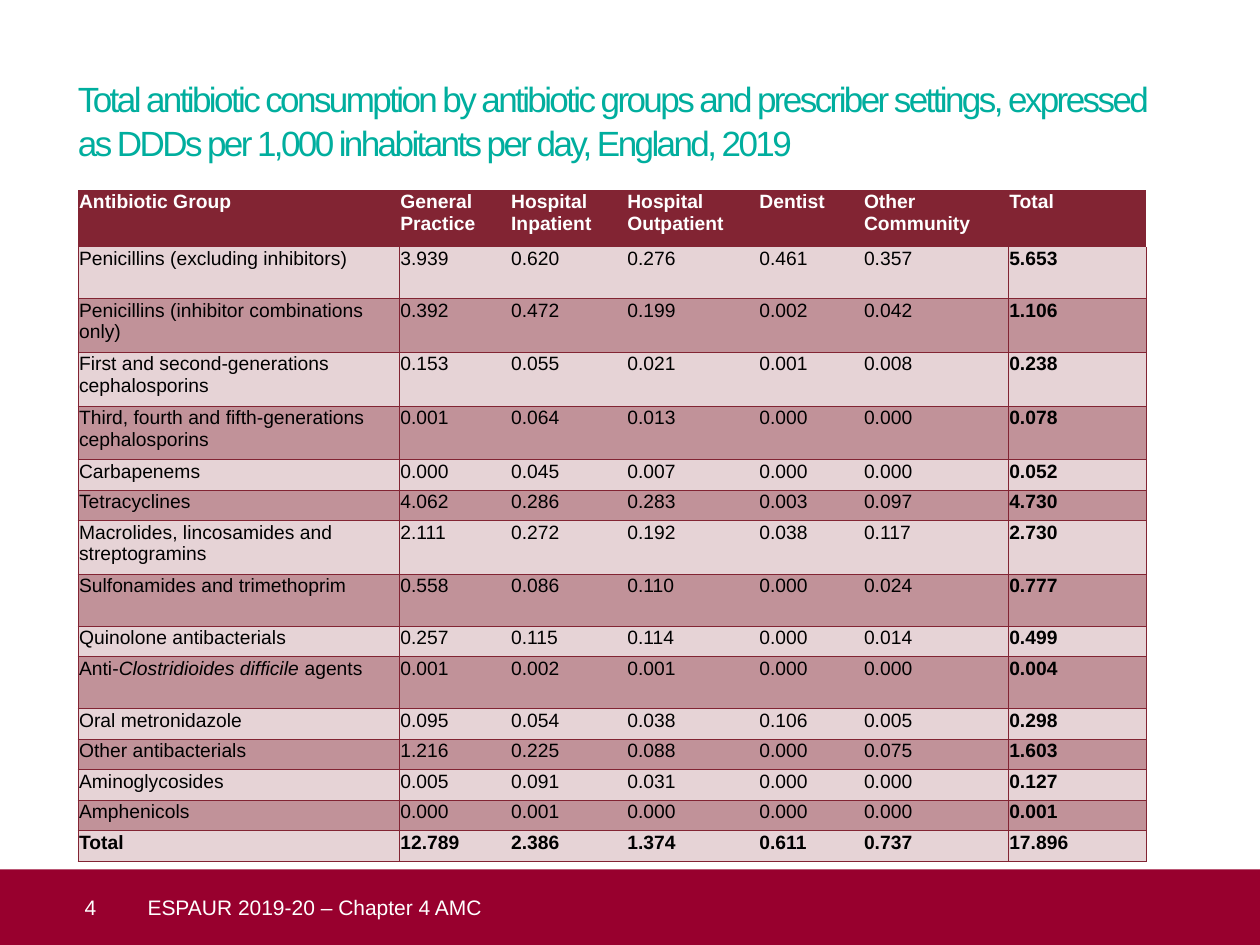
from dataclasses import dataclass

from lxml.etree import SubElement
from pptx import Presentation
from pptx.dml.color import RGBColor as RGB
from pptx.enum.shapes import MSO_SHAPE as SHAPE
from pptx.enum.text import MSO_ANCHOR as ANCHOR, PP_ALIGN as ALIGN
from pptx.oxml.ns import qn
from pptx.util import Pt


@dataclass(frozen=True)
class Theme:
    font: str = "Arial"
    teal: str = "00AE9E"
    crimson: str = "98002E"
    maroon: str = "822433"
    light: str = "E6D3D6"
    dark: str = "C19299"
    white: str = "FFFFFF"
    black: str = "000000"
    title: int = 20
    footer: int = 12
    body: int = 11


T = Theme()


def add_run(p, text, size, color, bold=False, italic=False):
    r = p.add_run()
    r.text = text
    f = r.font
    f.name, f.size, f.bold, f.italic = T.font, Pt(size), bold, italic
    f.color.rgb = RGB.from_string(color)
    return r


def set_borders(cell, sides):
    """Draw a thin maroon line on the named sides (L, R, T, B), none on the rest."""
    tcPr = cell._tc.get_or_add_tcPr()
    for side in "LRTB":
        ln = SubElement(tcPr, qn(f"a:ln{side}"), w=str(Pt(0.5)))
        if side in sides:
            fill = SubElement(ln, qn("a:solidFill"))
            SubElement(fill, qn("a:srgbClr"), val=T.maroon)
        else:
            SubElement(ln, qn("a:noFill"))


prs = Presentation()
prs.slide_width, prs.slide_height = Pt(720), Pt(540)
s = prs.slides.add_slide(prs.slide_layouts[6])

# Title
tf = s.shapes.add_textbox(Pt(44.6), Pt(43.2), Pt(632), Pt(51)).text_frame
tf.word_wrap = True
tf.margin_left = tf.margin_top = tf.margin_right = tf.margin_bottom = 0
p = tf.paragraphs[0]
p.line_spacing = 1.05
r = add_run(p, "Total antibiotic consumption by antibiotic groups and prescriber settings, "
            "expressed as DDDs per 1,000 inhabitants per day, England, 2019", T.title, T.teal)
r._r.get_or_add_rPr().set("spc", "-150")

# Footer band with page number, then the footer text
band = s.shapes.add_shape(SHAPE.RECTANGLE, 0, Pt(496.8), Pt(720), Pt(43.2))
band.shadow.inherit = False
band.fill.solid()
band.fill.fore_color.rgb = RGB.from_string(T.crimson)
band.line.fill.background()
label = s.shapes.add_textbox(Pt(70.6), Pt(496.8), Pt(635), Pt(43.2))
for sp, text, indent in [(band, "4", 48.4), (label, "ESPAUR 2019-20 – Chapter 4 AMC", 13.7)]:
    tf = sp.text_frame
    tf.word_wrap = True
    tf.vertical_anchor = ANCHOR.MIDDLE
    tf.margin_left = tf.margin_top = tf.margin_right = tf.margin_bottom = 0
    p = tf.paragraphs[0]
    p.alignment = ALIGN.LEFT
    p._p.get_or_add_pPr().set("marL", str(Pt(indent)))
    add_run(p, text, T.footer, T.white)

# Consumption table
HEADER, TALL, SHORT = 32.4, 29.7, 16.6
widths = [183.6, 63.3, 66.4, 75.5, 59.8, 83, 79]
header = ["Antibiotic Group", "General Practice", "Hospital Inpatient",
          "Hospital Outpatient", "Dentist", "Other Community", "Total"]
groups = [
    (TALL, "Penicillins (excluding inhibitors)", "3.939 0.620 0.276 0.461 0.357 5.653"),
    (TALL, "Penicillins (inhibitor combinations only)", "0.392 0.472 0.199 0.002 0.042 1.106"),
    (TALL, "First and second-generations cephalosporins", "0.153 0.055 0.021 0.001 0.008 0.238"),
    (TALL, "Third, fourth and fifth-generations cephalosporins",
     "0.001 0.064 0.013 0.000 0.000 0.078"),
    (SHORT, "Carbapenems", "0.000 0.045 0.007 0.000 0.000 0.052"),
    (SHORT, "Tetracyclines", "4.062 0.286 0.283 0.003 0.097 4.730"),
    (TALL, "Macrolides, lincosamides and streptogramins", "2.111 0.272 0.192 0.038 0.117 2.730"),
    (TALL, "Sulfonamides and trimethoprim", "0.558 0.086 0.110 0.000 0.024 0.777"),
    (SHORT, "Quinolone antibacterials", "0.257 0.115 0.114 0.000 0.014 0.499"),
    (TALL, "Anti-|Clostridioides difficile |agents", "0.001 0.002 0.001 0.000 0.000 0.004"),
    (SHORT, "Oral metronidazole", "0.095 0.054 0.038 0.106 0.005 0.298"),
    (SHORT, "Other antibacterials", "1.216 0.225 0.088 0.000 0.075 1.603"),
    (SHORT, "Aminoglycosides", "0.005 0.091 0.031 0.000 0.000 0.127"),
    (SHORT, "Amphenicols", "0.000 0.001 0.000 0.000 0.000 0.001"),
    (SHORT, "Total", "12.789 2.386 1.374 0.611 0.737 17.896"),
]
rows = [header] + [[name, *values.split()] for _, name, values in groups]
heights = [HEADER] + [height for height, _, _ in groups]
last_row, last_col = len(rows) - 1, len(widths) - 1

table = s.shapes.add_table(len(rows), len(widths), Pt(44.6), Pt(108.7),
                           Pt(sum(widths)), Pt(sum(heights))).table
for column, width in zip(table.columns, widths):
    column.width = Pt(width)
for i, (row, height) in enumerate(zip(rows, heights)):
    table.rows[i].height = Pt(height)
    fill = T.maroon if i == 0 else T.light if i % 2 else T.dark
    for j, text in enumerate(row):
        cell = table.cell(i, j)
        cell.margin_left = cell.margin_top = cell.margin_right = Pt(0.6)
        cell.margin_bottom = Pt(3.6)
        sides = ""
        if i > 0:
            sides = "B" if i == 1 else "TB"
            if j in (0, 1, last_col):
                sides += "L"
            if j in (0, last_col - 1, last_col):
                sides += "R"
        set_borders(cell, sides)
        cell.fill.solid()
        cell.fill.fore_color.rgb = RGB.from_string(fill)
        # Parts between bars are italic
        for k, part in enumerate(text.split("|")):
            add_run(cell.text_frame.paragraphs[0], part, T.body,
                    T.black if i else T.white,
                    bold=i in (0, last_row) or j == last_col, italic=k % 2 == 1)

prs.save("out.pptx")
